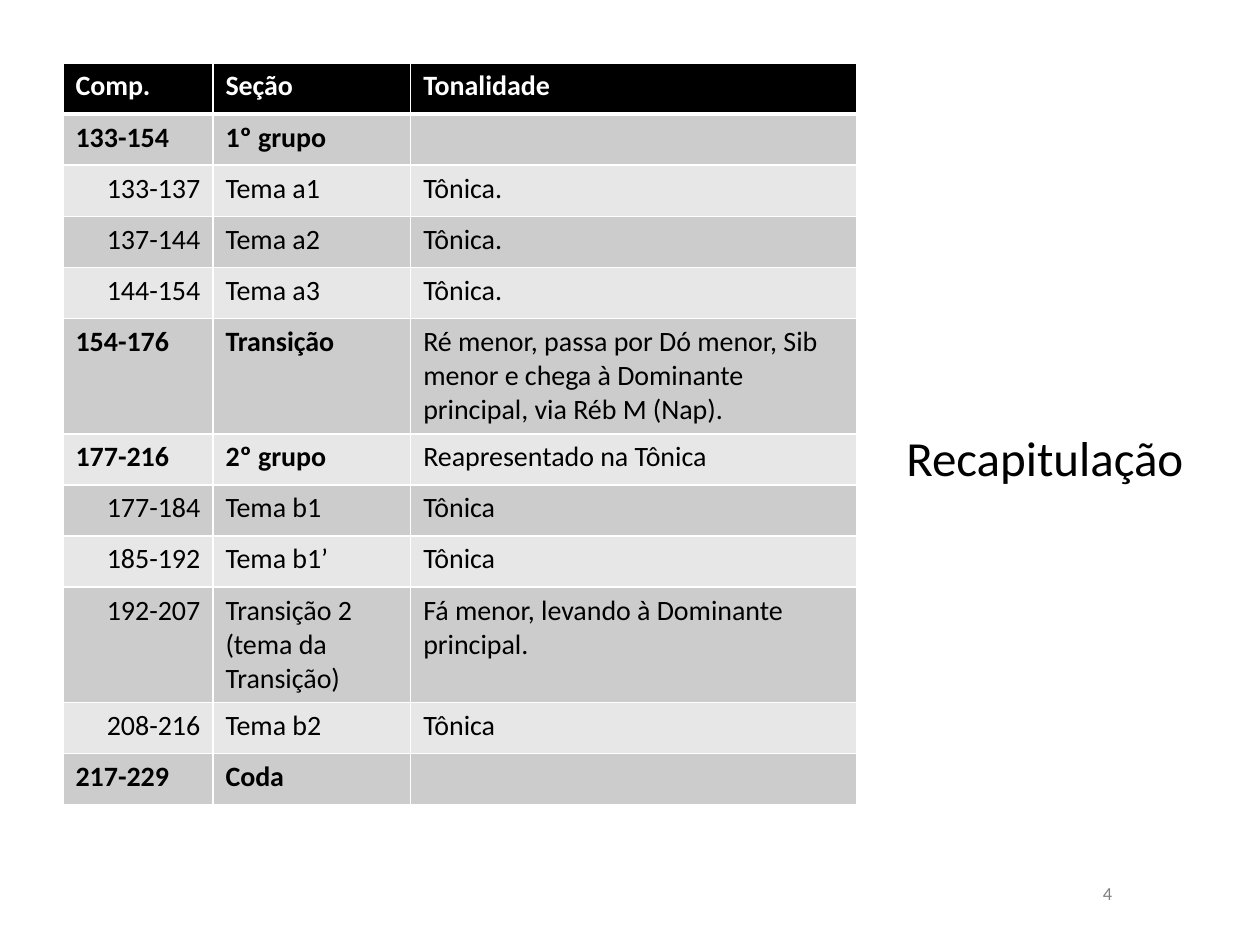
"""Build the slide that tabulates the sections of the recapitulation."""
from lxml.etree import SubElement
from pptx import Presentation
from pptx.dml.color import RGBColor
from pptx.enum.text import MSO_ANCHOR, PP_ALIGN
from pptx.oxml.ns import qn
from pptx.util import Inches, Pt

HEAD = ("Comp.", "Seção", "Tonalidade")
ROWS = [
    ("main", "133-154", "1º grupo", ""),
    ("sub", "133-137", "Tema a1", "Tônica."),
    ("sub", "137-144", "Tema a2", "Tônica."),
    ("sub", "144-154", "Tema a3", "Tônica."),
    ("main", "154-176", "Transição",
     "Ré menor, passa por Dó menor, Sib menor e chega à Dominante principal, via Réb M (Nap)."),
    ("main", "177-216", "2º grupo", "Reapresentado na Tônica"),
    ("sub", "177-184", "Tema b1", "Tônica"),
    ("sub", "185-192", "Tema b1’", "Tônica"),
    ("sub", "192-207", "Transição 2 (tema da Transição)",
     "Fá menor, levando à Dominante principal."),
    ("sub", "208-216", "Tema b2", "Tônica"),
    ("main", "217-229", "Coda", ""),
]
TITLE = "Recapitulação"
PAGE = "4"
COLS = (1.19, 1.57, 3.54)
THEME = {
    "font": "Calibri", "cell": 16, "title": 28, "page": 10.5,
    "ink": "000000", "paper": "FFFFFF", "grey": "808080",
    "bands": ("CCCCCC", "E7E7E7"), "thin": 1, "thick": 3,
}


def write(frame, text, size, color, bold=False, align=PP_ALIGN.LEFT):
    """Write one styled run into the first paragraph of a frame."""
    par = frame.paragraphs[0]
    par.alignment = align
    run = par.add_run()
    run.text = text
    font = run.font
    font.name, font.size, font.bold = THEME["font"], Pt(size), bold
    font.color.rgb = RGBColor.from_string(color)


def edge(cell, side, width):
    """Draw one border of a cell."""
    line = SubElement(cell._tc.get_or_add_tcPr(), qn("a:ln" + side), w=str(Pt(width)))
    fill = SubElement(line, qn("a:solidFill"))
    SubElement(fill, qn("a:srgbClr"), val=THEME["paper"])


def label(slide, area, text, size, color, align, pad):
    """Add a text box centred on its height."""
    frame = slide.shapes.add_textbox(*map(Inches, area)).text_frame
    frame.word_wrap = True
    frame.vertical_anchor = MSO_ANCHOR.MIDDLE
    frame.margin_left = frame.margin_right = Inches(pad)
    frame.margin_top = frame.margin_bottom = Inches(pad / 2)
    write(frame, text, size, color, align=align)


def grid(slide):
    """Add the table of sections."""
    area = map(Inches, (0.5, 0.5, sum(COLS), 4.87))
    table = slide.shapes.add_table(len(ROWS) + 1, len(COLS), *area).table
    for col, width in zip(table.columns, COLS):
        col.width = Inches(width)
    for r, (kind, *texts) in enumerate([("head", *HEAD), *ROWS]):
        head = kind == "head"
        back = THEME["ink"] if head else THEME["bands"][(r - 1) % 2]
        color = THEME["paper"] if head else THEME["ink"]
        for c, text in enumerate(texts):
            cell = table.cell(r, c)
            for side in "LRTB":
                thick = (r, side) in ((0, "B"), (1, "T"))
                edge(cell, side, THEME["thick" if thick else "thin"])
            cell.fill.solid()
            cell.fill.fore_color.rgb = RGBColor.from_string(back)
            if text:
                bold = head or (kind == "main" and c < 2)
                align = PP_ALIGN.RIGHT if kind == "sub" and c == 0 else PP_ALIGN.LEFT
                write(cell.text_frame, text, THEME["cell"], color, bold, align)


def main():
    """Build and save the slide."""
    deck = Presentation()
    deck.slide_width, deck.slide_height = Inches(10), Inches(7.5)
    slide = deck.slides.add_slide(deck.slide_layouts[6])
    grid(slide)
    label(slide, (7.05, 0.5, 2.44, 6.25), TITLE, THEME["title"], THEME["ink"],
          PP_ALIGN.RIGHT, 0.1)
    label(slide, (8.5, 7, 0.58, 0.17), PAGE, THEME["page"], THEME["grey"],
          PP_ALIGN.CENTER, 0)
    deck.save("out.pptx")


if __name__ == "__main__":
    main()
